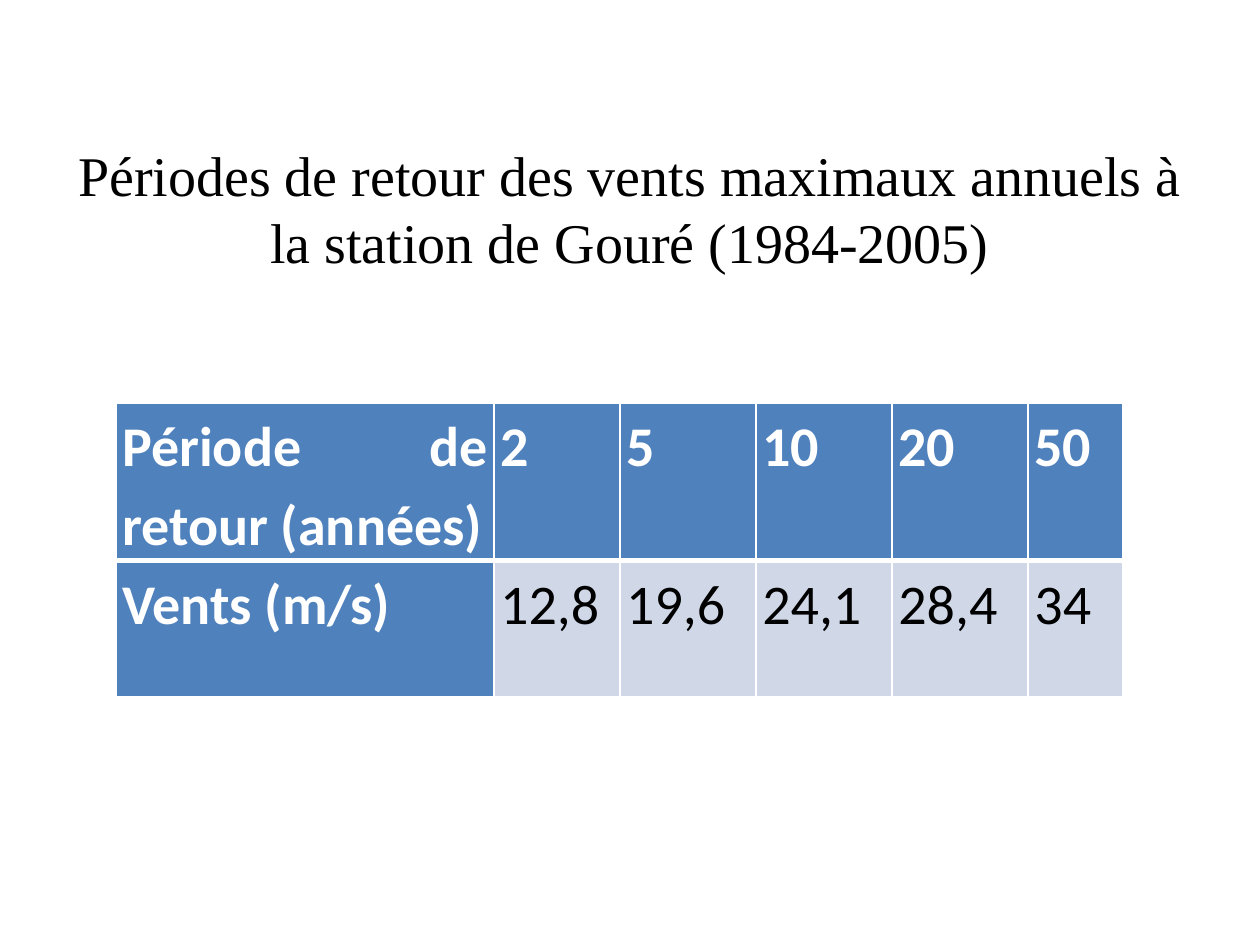
"""Build the slide on return periods of maximum annual winds at Gouré."""
import pptx
import pptx.dml.color
import pptx.enum.text
import pptx.oxml
import pptx.oxml.ns
import pptx.util

Inches, Pt = pptx.util.Inches, pptx.util.Pt
Align, Anchor = pptx.enum.text.PP_ALIGN, pptx.enum.text.MSO_ANCHOR

TITLE = "Périodes de retour des vents maximaux annuels à la station de Gouré (1984-2005)"
ROWS = [
    ["Période de retour (années)", "2", "5", "10", "20", "50"],
    ["Vents (m/s)", "12,8", "19,6", "24,1", "28,4", "34"],
]
COLUMN_WIDTHS = [3, 1, 1.08, 1.08, 1.08, 0.75]
ROW_HEIGHTS = [1.24, 1.08]
THEME = {
    "title_font": "Times New Roman", "table_font": "Calibri", "size": 32,
    "text": "000000", "heading_text": "FFFFFF",
    "heading_fill": "4F81BD", "value_fill": "D0D8E8",
    "rule": "FFFFFF", "thin": 1, "thick": 3,
}


def color(name):
    return pptx.dml.color.RGBColor.from_string(THEME[name])


def set_font(paragraph, family, ink, bold=False):
    font = paragraph.font
    font.name, font.size, font.bold = THEME[family], Pt(THEME["size"]), bold
    font.color.rgb = color(ink)


def set_borders(cell, weights):
    properties = cell._tc.get_or_add_tcPr()
    for index, (side, weight) in enumerate(weights.items()):
        line = pptx.oxml.parse_xml(
            f'<a:ln{side} {pptx.oxml.ns.nsdecls("a")} w="{Pt(THEME[weight])}">'
            f'<a:solidFill><a:srgbClr val="{THEME["rule"]}"/></a:solidFill></a:ln{side}>')
        properties.insert(index, line)


def fill_cell(cell, text, row, column):
    heading = row == 0 or column == 0
    cell.text = text
    cell.margin_left = cell.margin_right = Inches(0.05)
    cell.margin_top = cell.margin_bottom = 0
    cell.vertical_anchor = Anchor.BOTTOM if row == column == 0 else Anchor.TOP
    cell.fill.solid()
    cell.fill.fore_color.rgb = color("heading_fill" if heading else "value_fill")
    paragraph = cell.text_frame.paragraphs[0]
    paragraph.alignment, paragraph.line_spacing = Align.JUSTIFY, 1.15
    set_font(paragraph, "table_font", "heading_text" if heading else "text", heading)
    set_borders(cell, {
        "L": "thin", "R": "thin",
        "T": "thin" if row == 0 else "thick",
        "B": "thick" if row == 0 else "thin",
    })


def add_title(page):
    title = page.shapes.title
    title.left, title.top = Inches(0.5), Inches(0.8)
    title.width, title.height = Inches(9), Inches(1.7)
    frame = title.text_frame
    frame.text, frame.word_wrap, frame.vertical_anchor = TITLE, True, Anchor.MIDDLE
    paragraph = frame.paragraphs[0]
    paragraph.alignment = Align.CENTER
    set_font(paragraph, "title_font", "text")


def add_wind_table(page):
    table = page.shapes.add_table(
        len(ROWS), len(COLUMN_WIDTHS), Inches(0.92), Inches(3.2),
        Inches(sum(COLUMN_WIDTHS)), Inches(sum(ROW_HEIGHTS))).table
    table.first_col = True
    for column, width in zip(table.columns, COLUMN_WIDTHS):
        column.width = Inches(width)
    for table_row, height in zip(table.rows, ROW_HEIGHTS):
        table_row.height = Inches(height)
    for row, texts in enumerate(ROWS):
        for column, text in enumerate(texts):
            fill_cell(table.cell(row, column), text, row, column)


def main():
    deck = pptx.Presentation()
    deck.slide_width, deck.slide_height = Inches(10), Inches(7.5)
    page = deck.slides.add_slide(deck.slide_layouts.get_by_name("Title Only"))
    add_title(page)
    add_wind_table(page)
    deck.save("out.pptx")


if __name__ == "__main__":
    main()
